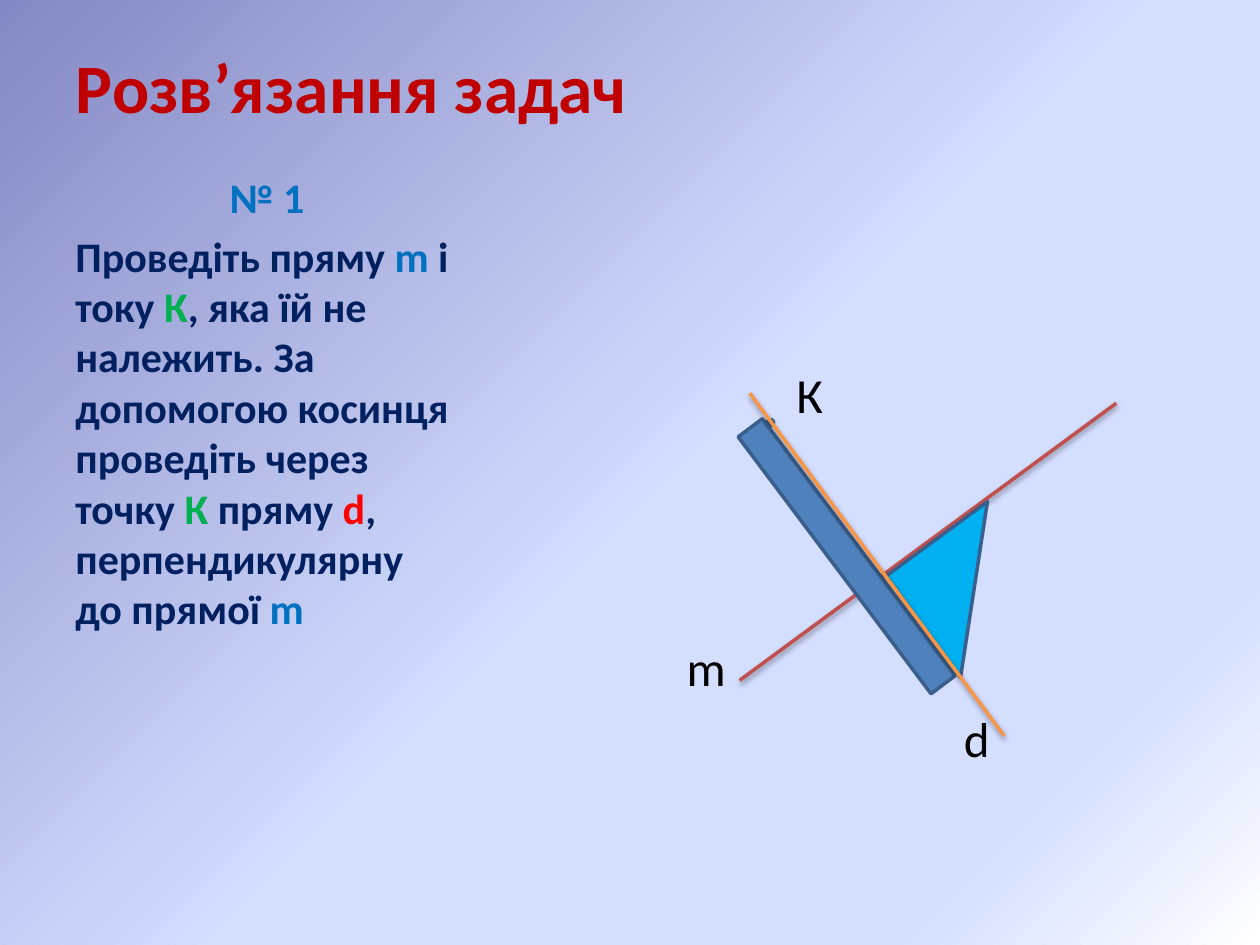
from copy import deepcopy
from dataclasses import dataclass

from pptx import Presentation
from pptx.dml.color import RGBColor
from pptx.enum import shapes, text
from pptx.oxml.ns import qn
from pptx.util import Emu, Inches, Pt

COLUMNS, ROWS = 10, 7.5


@dataclass(frozen=True)
class Theme:
    font: str = "Calibri"
    title_size: float = 39.6
    body_size: float = 24
    label_size: float = 28
    line_width: float = 2
    title: str = "C00000"
    body: str = "002060"
    line_name: str = "0070C0"
    point_name: str = "00B050"
    perpendicular_name: str = "FF0000"
    label: str = "000000"
    given_line: str = "C0504D"
    perpendicular: str = "F79646"
    ruler: str = "4F81BD"
    triangle: str = "00B0F0"
    outline: str = "3A5F8C"
    background: tuple = ((0, "8488C4"), (0.53, "D4DEFF"), (0.83, "D4DEFF"), (1, "FFFFFF"))


@dataclass(frozen=True)
class Box:
    left: float
    top: float
    width: float
    height: float

    def inner(self, left, top, width, height):
        return Box(self.left + left, self.top + top, width, height)

    def point(self, column, row):
        return self.left + column, self.top + row


THEME = Theme()


class Grid:
    def __init__(self, presentation):
        self.column = presentation.slide_width / COLUMNS
        self.row = presentation.slide_height / ROWS

    def position(self, column, row):
        return Emu(round(column * self.column)), Emu(round(row * self.row))

    def frame(self, box):
        return *self.position(box.left, box.top), *self.position(box.width, box.height)


def color(value):
    return RGBColor.from_string(value)


def paint_background(slide):
    fill = slide.background.fill
    fill.gradient()
    fill.gradient_angle = 315
    stop_list = slide._element.find(".//" + qn("a:gsLst"))
    while len(stop_list) < len(THEME.background):
        stop_list.append(deepcopy(stop_list[0]))
    for stop, (position, value) in zip(fill.gradient_stops, THEME.background):
        stop.position = position
        stop.color.rgb = color(value)


def add_text(slide, grid, box, paragraphs, size, bold=False, centered=(), inset=True,
             anchor=text.MSO_ANCHOR.TOP):
    frame = slide.shapes.add_textbox(*grid.frame(box)).text_frame
    frame.word_wrap = True
    frame.vertical_anchor = anchor
    if not inset:
        frame.margin_left = frame.margin_right = frame.margin_top = frame.margin_bottom = 0
    for index, runs in enumerate(paragraphs):
        paragraph = frame.add_paragraph() if index else frame.paragraphs[0]
        paragraph.font.name = THEME.font
        paragraph.font.size = Pt(size)
        paragraph.font.bold = bold
        if index in centered:
            paragraph.alignment = text.PP_ALIGN.CENTER
        if index:
            paragraph.space_before = Pt(0.2 * size)
        for words, value in runs:
            run = paragraph.add_run()
            run.text = words
            run.font.color.rgb = color(value)


def add_title(slide, grid, box):
    add_text(slide, grid, box, [[("Розв’язання задач", THEME.title)]], THEME.title_size,
             bold=True, centered=(0,), anchor=text.MSO_ANCHOR.MIDDLE)


def add_problem(slide, grid, box):
    line = ("m", THEME.line_name)
    point = ("К", THEME.point_name)
    statement = [
        ("Проведіть пряму ", THEME.body), line,
        (" і току ", THEME.body), point,
        (", яка їй не належить. За допомогою косинця проведіть через точку ", THEME.body), point,
        (" пряму ", THEME.body), ("d", THEME.perpendicular_name),
        (", перпендикулярну до прямої ", THEME.body), line,
    ]
    add_text(slide, grid, box, [[("№ 1", THEME.line_name)], statement], THEME.body_size,
             bold=True, centered=(0,))


def add_line(slide, grid, start, end, value):
    line = slide.shapes.add_connector(shapes.MSO_CONNECTOR.STRAIGHT,
                                      *grid.position(*start), *grid.position(*end))
    line.line.color.rgb = color(value)
    line.line.width = Pt(THEME.line_width)


def add_solid(slide, grid, kind, box, rotation, value):
    shape = slide.shapes.add_shape(kind, *grid.frame(box))
    shape.rotation = rotation
    shape.shadow.inherit = False
    shape.fill.solid()
    shape.fill.fore_color.rgb = color(value)
    shape.line.color.rgb = color(THEME.outline)
    shape.line.width = Pt(THEME.line_width)


def add_construction(slide, grid, box):
    for name, left, top in (("К", 0.92, 0.09), ("m", 0.05, 2.26), ("d", 2.25, 2.82)):
        add_text(slide, grid, box.inner(left, top, 0.4, 0.48), [[(name, THEME.label)]],
                 THEME.label_size, inset=False)
    add_line(slide, grid, box.point(0.47, 2.6), box.point(3.46, 0.4), THEME.given_line)
    kinds = shapes.MSO_SHAPE
    for kind, place, rotation, value in (
        (kinds.OVAL, (0.69, 0.53, 0.05, 0.05), 337.6, THEME.ruler),
        (kinds.RIGHT_TRIANGLE, (1.83, 1.38, 1, 1), 53.7, THEME.triangle),
        (kinds.RECTANGLE, (1.2, 0.34, 0.24, 2.55), 323.1, THEME.ruler),
    ):
        add_solid(slide, grid, kind, box.inner(*place), rotation, value)
    add_line(slide, grid, box.point(0.55, 0.32), box.point(2.57, 3.04), THEME.perpendicular)


def main():
    presentation = Presentation()
    presentation.slide_width = Inches(10)
    presentation.slide_height = Inches(7.5)
    grid = Grid(presentation)
    slide = presentation.slides.add_slide(presentation.slide_layouts[6])
    paint_background(slide)
    add_title(slide, grid, Box(0.35, 0.3, 4.88, 0.77))
    add_problem(slide, grid, Box(0.5, 1.31, 3.24, 5.39))
    add_construction(slide, grid, Box(5.4, 2.8, 3.5, 3.3))
    presentation.save("out.pptx")


if __name__ == "__main__":
    main()
